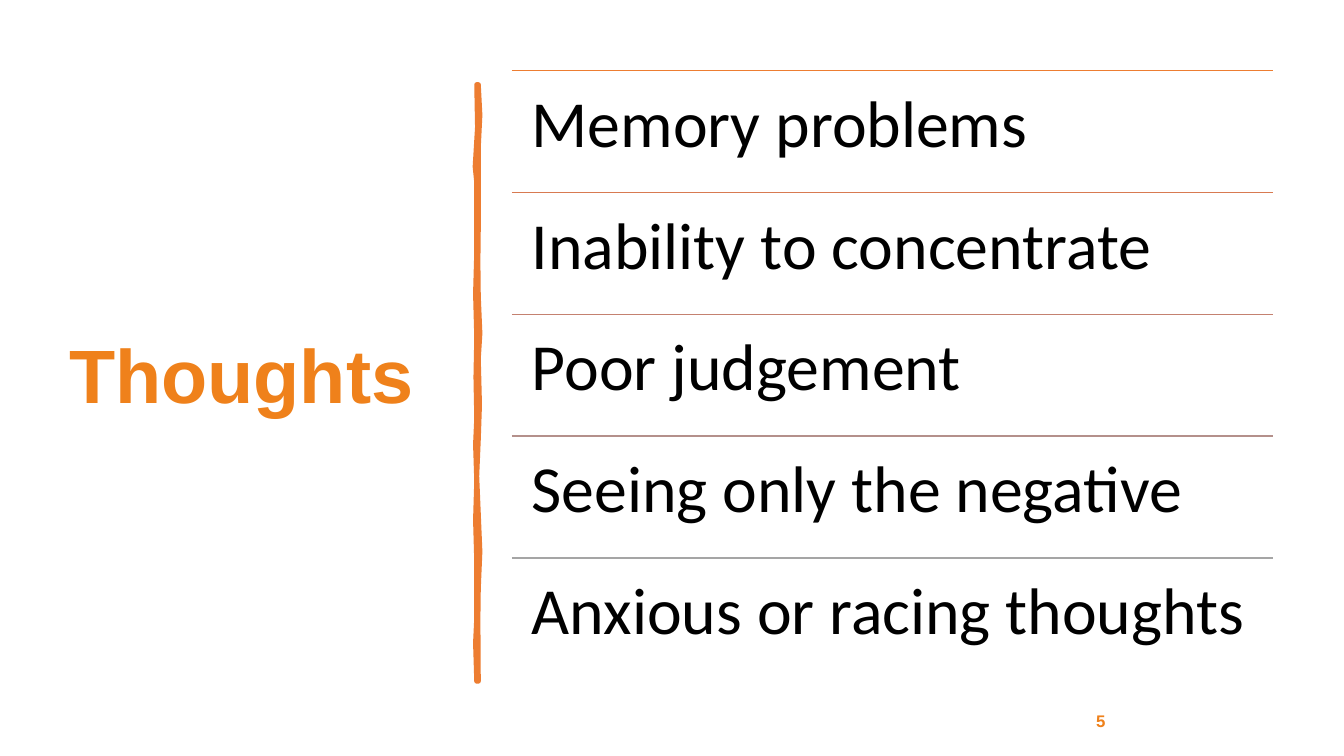
"""Build the slide on how stress shows in thoughts."""
from lxml.etree import SubElement
from pptx import Presentation
from pptx.dml.color import RGBColor
from pptx.enum.shapes import MSO_CONNECTOR as Link
from pptx.enum.text import MSO_ANCHOR as Anchor, PP_ALIGN as Align
from pptx.oxml.ns import qn
from pptx.util import Cm, Pt

ORANGE = RGBColor(0xEF, 0x81, 0x1B)
RUST = RGBColor(0xED, 0x7D, 0x31)
BLACK = RGBColor(0, 0, 0)

TITLE = "Thoughts"
PAGE = "5"
SIGNS = [
    ("Memory problems", RUST),
    ("Inability to concentrate", RGBColor(0xD8, 0x7A, 0x51)),
    ("Poor judgement", RGBColor(0xC4, 0x81, 0x70)),
    ("Seeing only the negative", RGBColor(0xB4, 0x90, 0x8B)),
    ("Anxious or racing thoughts", RGBColor(0xA5, 0xA5, 0xA5)),
]
STROKE = [
    (12.06, 2.13), (12.1, 2.9), (12.06, 3.71), (12.06, 5.74),
    (12.05, 6.6), (12.06, 7.47), (12.1, 8.4), (12.06, 9.04),
    (12.09, 10.2), (12.06, 11.07), (12.02, 12), (12.06, 12.95),
    (12.1, 13.9), (12.06, 14.83), (12.05, 15.6), (12.06, 17.17),
    (12.01, 17.17), (11.98, 16.2), (12.01, 15.57), (12.01, 14.15),
    (11.98, 13.1), (12.01, 12.12), (11.98, 11.2), (12.01, 10.54),
    (11.99, 9.5), (12.01, 8.51), (11.98, 7.4), (12.01, 6.35),
    (12.01, 4.6), (11.97, 4.2), (12.03, 3.2), (12.01, 2.13),
]
LEFT, TOP, WIDTH, STEP = 12.9, 1.78, 19.18, 3.07


def add_text(slide, text, box, size, font, color, bold=False, pad=0):
    frame = slide.shapes.add_textbox(*map(Cm, box)).text_frame
    frame.word_wrap = True
    frame.margin_left = frame.margin_right = Cm(pad)
    frame.margin_top = frame.margin_bottom = Cm(pad)
    frame.text = text
    face = frame.paragraphs[0].runs[0].font
    face.size, face.name, face.bold = Pt(size), font, bold
    face.color.rgb = color
    return frame


def add_rule(slide, top, color):
    rule = slide.shapes.add_connector(
        Link.STRAIGHT, Cm(LEFT), Cm(top), Cm(LEFT + WIDTH), Cm(top))
    rule.line.color.rgb = color
    rule.line.width = Pt(1)
    SubElement(rule._element.spPr, qn("a:effectLst"))


def add_stroke(slide):
    points = [(Cm(x), Cm(y)) for x, y in STROKE]
    pen = slide.shapes.build_freeform(*points[0])
    pen.add_line_segments(points[1:], close=True)
    stroke = pen.convert_to_shape()
    stroke.shadow.inherit = False
    stroke.fill.solid()
    stroke.fill.fore_color.rgb = RUST
    stroke.line.color.rgb = RUST
    stroke.line.width = Pt(3.25)
    SubElement(stroke.line._get_or_add_ln(), qn("a:round"))


def main():
    deck = Presentation()
    deck.slide_width, deck.slide_height = Cm(33.87), Cm(19.05)
    slide = deck.slides.add_slide(deck.slide_layouts[6])

    title = add_text(slide, TITLE, (1.75, 1.78, 9.5, 15.52), 54, "Arial",
                     ORANGE, bold=True)
    title.vertical_anchor = Anchor.MIDDLE
    title.paragraphs[0].line_spacing = 0.9
    add_stroke(slide)

    page = add_text(slide, PAGE, (23.93, 17.65, 7.62, 1.02), 12, "Arial",
                    ORANGE, bold=True)
    page.vertical_anchor = Anchor.MIDDLE
    page.paragraphs[0].alignment = Align.CENTER
    page.paragraphs[0].space_after = Pt(6)

    for i, (sign, color) in enumerate(SIGNS):
        top = TOP + i * STEP
        add_rule(slide, top, color)
        row = add_text(slide, sign, (LEFT, top, WIDTH, STEP), 47, "Calibri",
                       BLACK, pad=0.5)
        row.paragraphs[0].line_spacing = 0.9

    deck.save("out.pptx")


if __name__ == "__main__":
    main()
